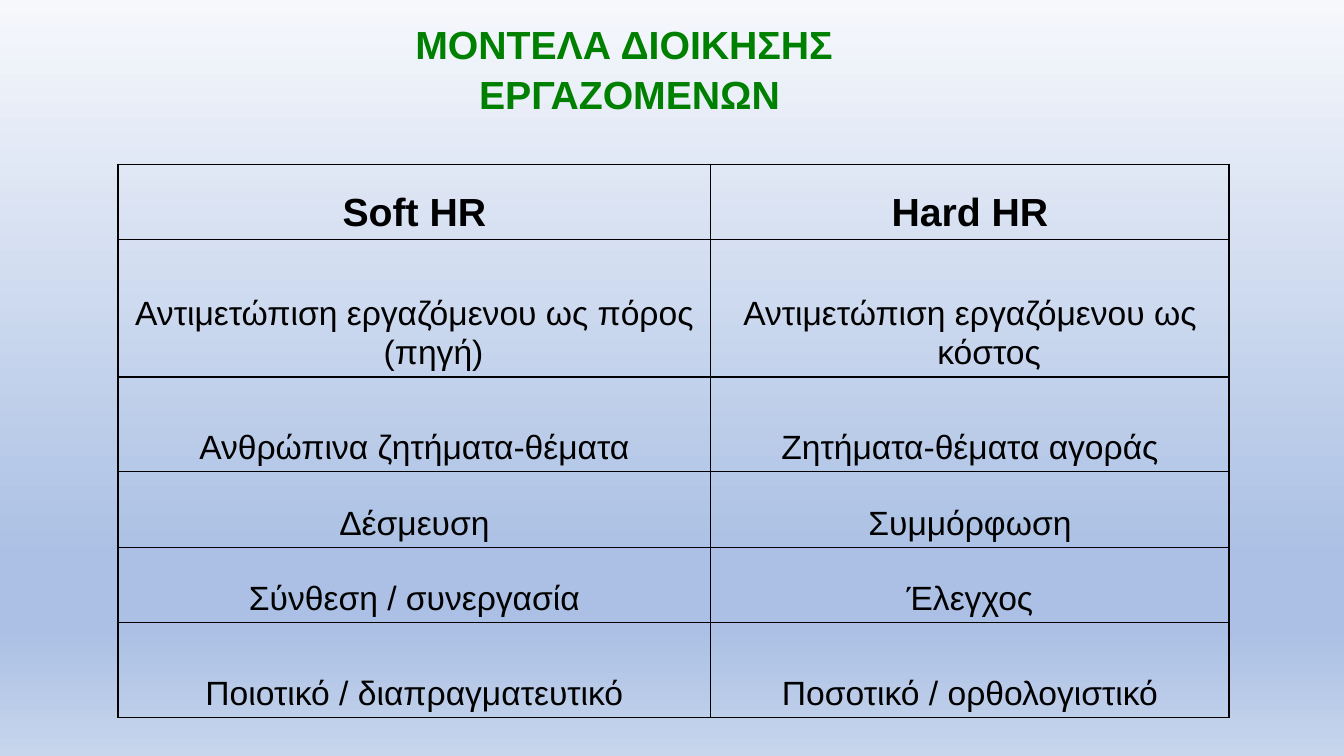
from pptx import Presentation
from pptx.dml.color import RGBColor
from pptx.enum.text import MSO_ANCHOR, PP_ALIGN
from pptx.oxml.ns import qn
from pptx.util import Inches, Pt
from lxml.etree import SubElement

WIDTH, HEIGHT = Inches(13.33), Inches(7.5)
FONT = "Arial"
GRADIENT = [(0, "F6F8FC"), (74, "ABC0E4"), (83, "ABC0E4"), (100, "C7D5ED")]
TITLE = ["ΜΟΝΤΕΛΑ ΔΙΟΙΚΗΣΗΣ ", "ΕΡΓΑΖΟΜΕΝΩΝ"]
COL_SHARES = [44.11, 38.56]
ROW_SHARES = [10, 18.13, 12.53, 10, 10, 12.53]
ROWS = [
    ("Soft HR", "Hard HR"),
    ("Αντιμετώπιση εργαζόμενου ως πόρος (πηγή)", "Αντιμετώπιση εργαζόμενου ως κόστος"),
    ("Ανθρώπινα ζητήματα-θέματα", "Ζητήματα-θέματα αγοράς"),
    ("Δέσμευση", "Συμμόρφωση"),
    ("Σύνθεση / συνεργασία", "Έλεγχος"),
    ("Ποιοτικό / διαπραγματευτικό", "Ποσοτικό / ορθολογιστικό"),
]


def across(share):
    """Return a percentage of the slide's width."""
    return int(WIDTH * share / 100)


def down(share):
    """Return a percentage of the slide's height."""
    return int(HEIGHT * share / 100)


def rgb(value):
    """Return the colour of a hex string."""
    return RGBColor.from_string(value)


def write(p, text, size=24, bold=False, color="000000", indent=0):
    """Fill a centred paragraph with formatted text and a hanging indent."""
    p.alignment = PP_ALIGN.CENTER
    p.line_spacing = 1.05
    pPr = p._p.get_or_add_pPr()
    pPr.set("marL", str(Inches(indent)))
    pPr.set("indent", str(-Inches(indent)))
    r = p.add_run()
    r.text = text
    r.font.name = FONT
    r.font.size = Pt(size)
    r.font.bold = bold
    r.font.color.rgb = rgb(color)


def paint_background(s, stops):
    """Give the slide a vertical gradient with the given stops."""
    fill = s.background.fill
    fill.gradient()
    fill.gradient_angle = 270
    gs_list = s._element.find(".//" + qn("a:gsLst"))
    for gs in list(gs_list):
        gs_list.remove(gs)
    for position, color in stops:
        gs = SubElement(gs_list, qn("a:gs"), pos=str(position * 1000))
        SubElement(gs, qn("a:srgbClr"), val=str(rgb(color)))


def add_title(s, lines):
    """Place the title and write its lines."""
    sp = s.shapes.title
    sp.left, sp.top = across(30), down(1.73)
    sp.width, sp.height = across(33.68), down(20.13)
    tf = sp.text_frame
    tf.word_wrap = False
    tf.vertical_anchor = MSO_ANCHOR.TOP
    for i, line in enumerate(lines):
        p = tf.add_paragraph() if i else tf.paragraphs[0]
        write(p, line, size=28, bold=True, color="008000")


def add_borders(cell, color="000000", width=1):
    """Draw a solid line on each side of a cell."""
    tcPr = cell._tc.get_or_add_tcPr()
    for side in "LRTB":
        ln = SubElement(tcPr, qn("a:ln" + side), w=str(Pt(width)))
        SubElement(SubElement(ln, qn("a:solidFill")), qn("a:srgbClr"), val=str(rgb(color)))


def add_comparison(s, rows):
    """Add the transparent, ruled table of the two models."""
    table = s.shapes.add_table(
        len(rows), len(COL_SHARES), across(8.78), down(21.73),
        across(sum(COL_SHARES)), down(sum(ROW_SHARES))).table
    table.first_row = table.horz_banding = False
    for column, share in zip(table.columns, COL_SHARES):
        column.width = across(share)
    for i, (row, share) in enumerate(zip(table.rows, ROW_SHARES)):
        row.height = down(share)
        for cell, text in zip(row.cells, rows[i]):
            add_borders(cell)
            cell.fill.background()
            cell.vertical_anchor = MSO_ANCHOR.BOTTOM
            write(cell.text_frame.paragraphs[0], text,
                  size=24 if i else 28, bold=i == 0, indent=0.38)


def main():
    """Build and save the slide."""
    prs = Presentation()
    prs.slide_width, prs.slide_height = WIDTH, HEIGHT
    s = prs.slides.add_slide(prs.slide_layouts[5])
    paint_background(s, GRADIENT)
    add_title(s, TITLE)
    add_comparison(s, ROWS)
    prs.save("out.pptx")


if __name__ == "__main__":
    main()
